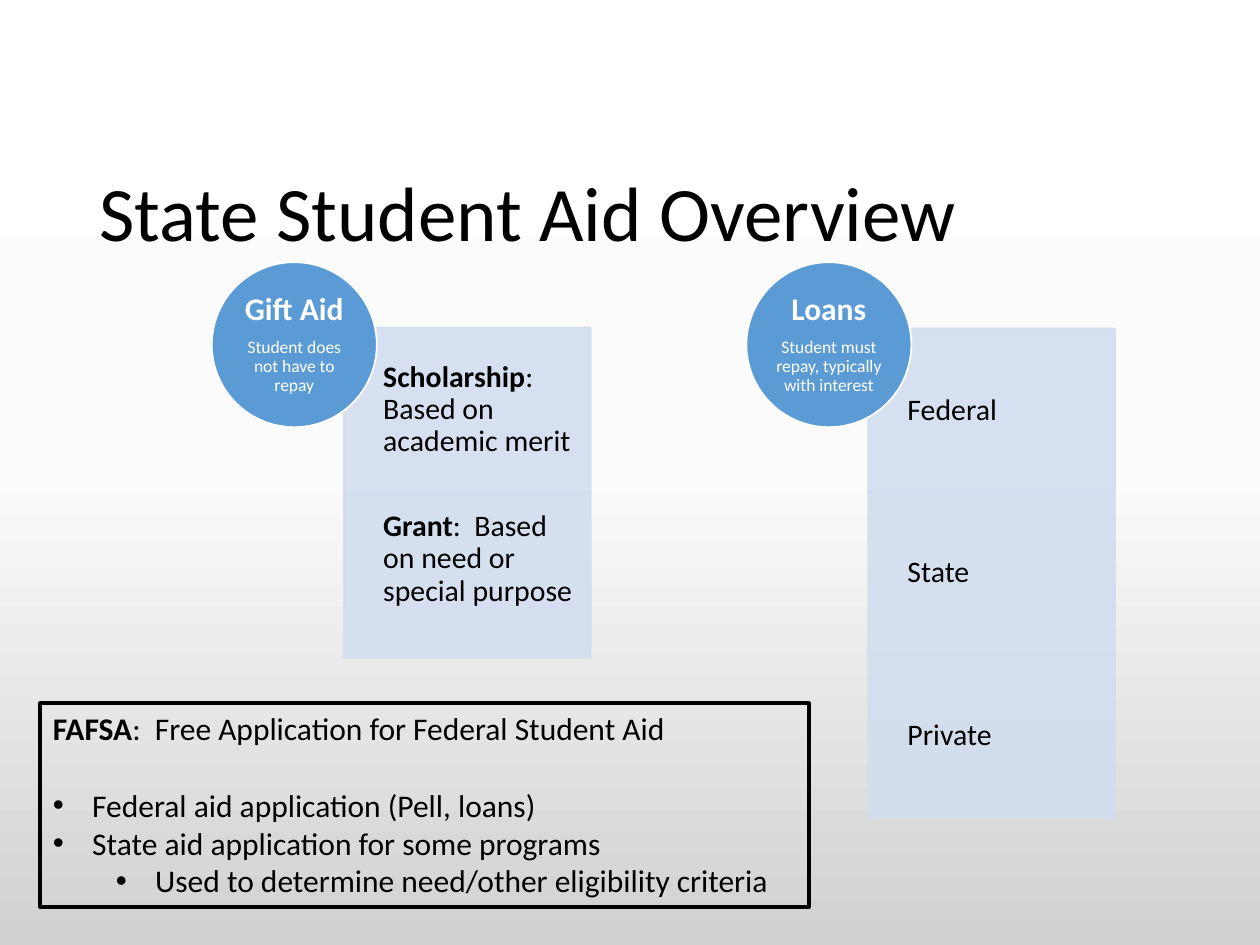
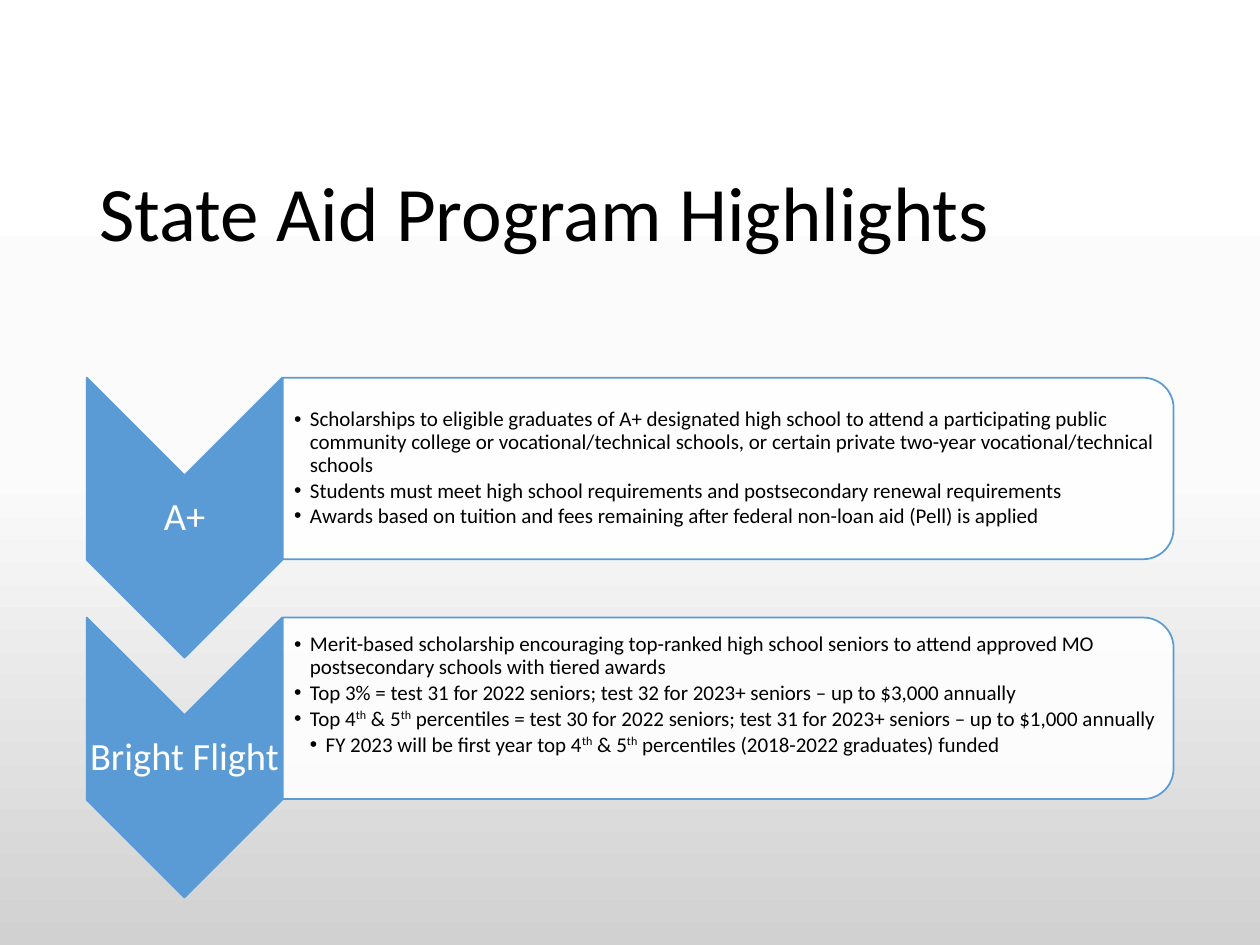
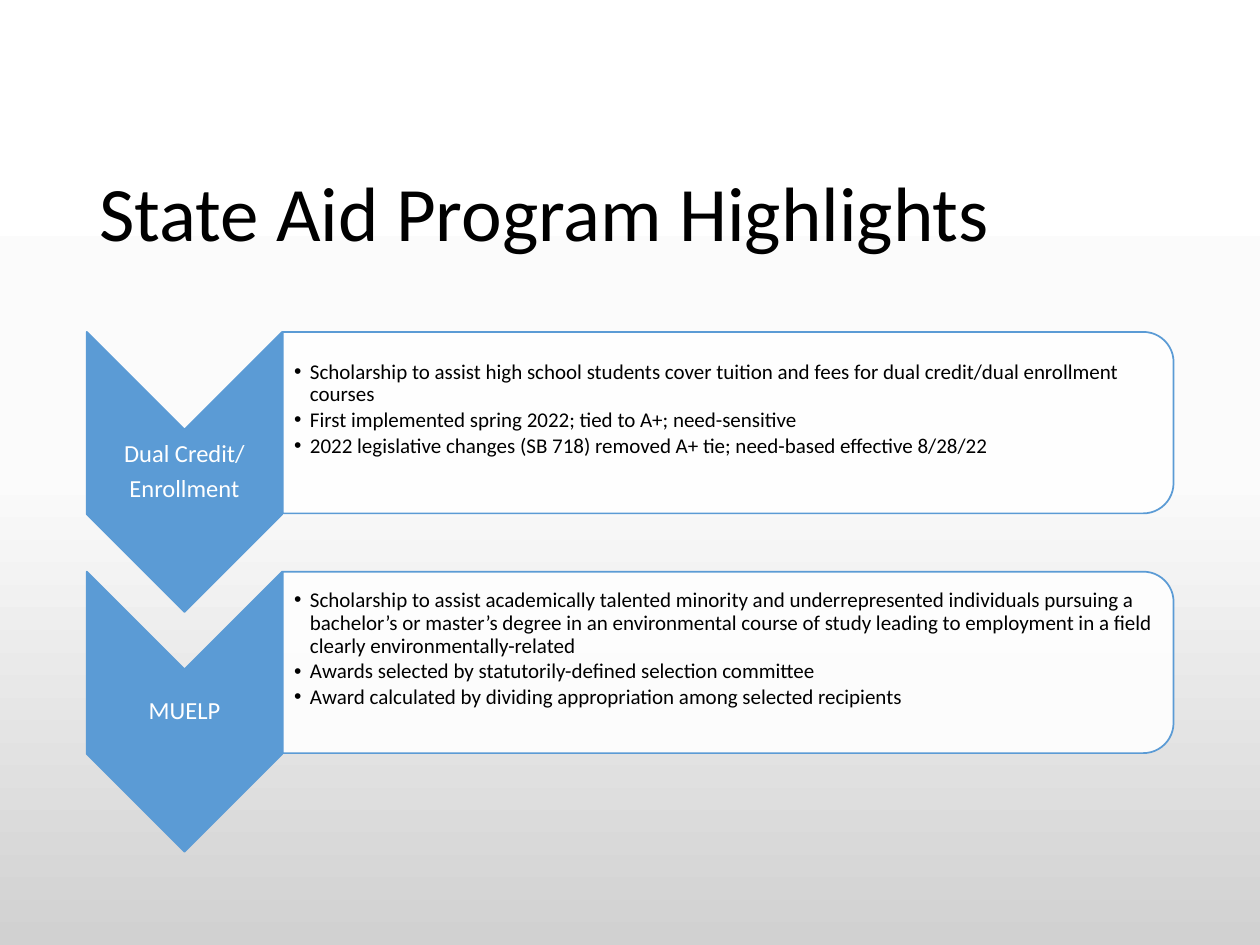
from copy import deepcopy
from dataclasses import dataclass, replace
from typing import Optional

from lxml.etree import SubElement
from pptx import Presentation
from pptx.dml.color import RGBColor
from pptx.enum.shapes import MSO_SHAPE
from pptx.enum.text import MSO_ANCHOR, MSO_AUTO_SIZE, PP_ALIGN
from pptx.oxml.ns import qn
from pptx.util import Pt

FONT = "Calibri"
BLACK = RGBColor(0x00, 0x00, 0x00)
WHITE = RGBColor(0xFF, 0xFF, 0xFF)
BLUE = RGBColor(0x5B, 0x9B, 0xD5)
PALE_BLUE = RGBColor(0xD2, 0xDE, 0xEF)
BACKGROUND_STOPS = (
    (0, WHITE),
    (0.5, RGBColor(0xFB, 0xFB, 0xFB)),
    (1, RGBColor(0xD1, 0xD1, 0xD1)),
)

ONE_BODY, TWO_BODIES = 1, 3  # layouts with one and with two body placeholders

CARD_WIDTH, CARD_HEIGHT, CARD_INDENT = 141, 94.3, 22.4
CIRCLE_TOP = 149.8
ROW_PITCH = 137
CHEVRON_LEFT, CHEVRON_WIDTH, CHEVRON_HEIGHT = 49.6, 111.6, 160
PANEL_LEFT, PANEL_WIDTH, PANEL_HEIGHT = 161.6, 509, 103.7


@dataclass(frozen=True)
class Box:
    left: float
    top: float
    width: float
    height: float

    def turned(self) -> "Box":
        """The frame that covers this box once it is rotated by 90 degrees."""
        shift = (self.width - self.height) / 2
        return Box(self.left + shift, self.top - shift, self.height, self.width)

    def points(self) -> tuple:
        return Pt(self.left), Pt(self.top), Pt(self.width), Pt(self.height)


@dataclass(frozen=True)
class Span:
    text: str
    bold: bool = False
    raised: bool = False


@dataclass(frozen=True)
class Line:
    spans: tuple[Span, ...]
    level: Optional[int] = None  # bullet level; None means no bullet
    size: Optional[float] = None
    space_before: float = 0


@dataclass(frozen=True)
class TextStyle:
    size: float
    color: RGBColor = BLACK
    alignment: PP_ALIGN = PP_ALIGN.LEFT
    line_spacing: float = 0.9
    space_after: float = 0.35  # share of the text size
    indents: tuple[float, ...] = ()
    anchor: MSO_ANCHOR = MSO_ANCHOR.MIDDLE
    insets: tuple[float, float, float, float] = (0, 0, 0, 0)


@dataclass(frozen=True)
class Card:
    line: Line
    bottom_inset: float = 9.4


@dataclass(frozen=True)
class AidType:
    name: str
    note: str
    circle_left: float
    card_left: float
    card_top: float
    card_pitch: float
    cards: tuple[Card, ...]


@dataclass(frozen=True)
class Program:
    name: tuple[str, ...]
    points: tuple[Line, ...]
    bottom_inset: float = 1


TITLE_STYLE = TextStyle(44, space_after=0, insets=(7.2, 3.6, 7.2, 3.6))
CARD_STYLE = TextStyle(17)
CIRCLE_STYLE = TextStyle(18, WHITE, PP_ALIGN.CENTER)
FAFSA_STYLE = TextStyle(18, line_spacing=1, space_after=0, indents=(22.5, 58.5),
                        anchor=MSO_ANCHOR.TOP, insets=(7.2, 3.6, 7.2, 3.6))


def line(text: str, level: Optional[int] = None, **options: float) -> Line:
    return Line((Span(text),), level, **options)


TH = Span("th", raised=True)

AID_TYPES = (
    AidType("Gift Aid", "Student does not have to repay", 121, 196.6, 187.2, 94.3, (
        Card(Line((Span("Scholarship", bold=True),
                   Span(": Based on academic merit")))),
        Card(Line((Span("Grant", bold=True),
                   Span(":  Based on need or special purpose"))), bottom_inset=27.6),
    )),
    AidType("Loans", "Student must repay, typically with interest",
            426.5, 496.2, 187.7, 92.7,
            (Card(line("Federal")), Card(line("State")), Card(line("Private")))),
)

FAFSA_LINES = (
    Line((Span("FAFSA", bold=True),
          Span(":  Free Application for Federal Student Aid"))),
    line("Federal aid application (Pell, loans)", 0, space_before=22),
    line("State aid application for some programs", 0),
    line("Used to determine need/other eligibility criteria", 1),
)

FIRST_PROGRAMS = (
    Program(("A+",), (
        line("Scholarships to eligible graduates of A+ designated high school to attend "
             "a participating public community college or vocational/technical schools, "
             "or certain private two-year vocational/technical schools", 0),
        line("Students must meet high school requirements and postsecondary renewal "
             "requirements", 0),
        line("Awards based on tuition and fees remaining after federal non-loan aid "
             "(Pell) is applied", 0),
    )),
    Program(("Bright Flight",), (
        line("Merit-based scholarship encouraging top-ranked high school seniors to "
             "attend approved MO postsecondary schools with tiered awards", 0),
        line("Top 3% = test 31 for 2022 seniors; test 32 for 2023+ seniors – "
             "up to $3,000 annually", 0),
        Line((Span("Top 4"), TH, Span(" & 5"), TH,
              Span(" percentiles = test 30 for 2022 seniors; test 31 for 2023+ seniors – "
                   "up to $1,000 annually")), 0),
        Line((Span("FY 2023 will be first year top 4"), TH, Span(" & 5"), TH,
              Span(" percentiles (2018-2022 graduates) funded")), 1),
    ), bottom_inset=16),
)

SECOND_PROGRAMS = (
    Program(("Dual Credit/", "Enrollment"), (
        line("Scholarship to assist high school students cover tuition and fees for "
             "dual credit/dual enrollment courses", 0),
        line("First implemented spring 2022; tied to A+; need-sensitive", 0),
        line("2022 legislative changes (SB 718) removed A+ tie; need-based effective "
             "8/28/22", 0),
    ), bottom_inset=16),
    Program(("MUELP",), (
        line("Scholarship to assist academically talented minority and underrepresented "
             "individuals pursuing a bachelor’s or master’s degree in an environmental "
             "course of study leading to employment in a field clearly "
             "environmentally-related", 0),
        line("Awards selected by statutorily-defined selection committee", 0),
        line("Award calculated by dividing appropriation among selected recipients", 0),
    ), bottom_inset=16),
)


def set_bullet(paragraph, level: Optional[int], indents: tuple[float, ...]) -> None:
    properties = paragraph._p.get_or_add_pPr()
    if level is None:
        properties.set("marL", "0")
        properties.set("indent", "0")
        SubElement(properties, qn("a:buNone"))
        return
    paragraph.level = level
    properties.set("marL", str(Pt(indents[level])))
    properties.set("indent", str(-Pt(indents[0])))
    SubElement(properties, qn("a:buFont")).set("typeface", "Arial")
    SubElement(properties, qn("a:buChar")).set("char", "•")


def write(text_frame, lines: tuple[Line, ...], style: TextStyle) -> None:
    text_frame.word_wrap = True
    text_frame.auto_size = MSO_AUTO_SIZE.NONE
    text_frame.vertical_anchor = style.anchor
    (text_frame.margin_left, text_frame.margin_top,
     text_frame.margin_right, text_frame.margin_bottom) = map(Pt, style.insets)
    for index, item in enumerate(lines):
        paragraph = text_frame.add_paragraph() if index else text_frame.paragraphs[0]
        size = item.size or style.size
        set_bullet(paragraph, item.level, style.indents)
        paragraph.alignment = style.alignment
        paragraph.line_spacing = style.line_spacing
        paragraph.space_before = Pt(item.space_before)
        paragraph.space_after = Pt(size * style.space_after)
        for span in item.spans:
            run = paragraph.add_run()
            run.text = span.text
            run.font.name = FONT
            run.font.size = Pt(size)
            run.font.bold = span.bold
            run.font.color.rgb = style.color
            if span.raised:
                run._r.get_or_add_rPr().set("baseline", "30000")


def place(shape, box: Box) -> None:
    shape.left, shape.top, shape.width, shape.height = box.points()


def add_filled_shape(slide, kind: MSO_SHAPE, box: Box, fill: RGBColor, outline: RGBColor,
                     translucent: bool = False, rotation: float = 0):
    shape = slide.shapes.add_shape(kind, *box.points())
    shape.rotation = rotation
    shape.shadow.inherit = False
    shape.fill.solid()
    shape.fill.fore_color.rgb = fill
    shape.line.color.rgb = outline
    shape.line.width = Pt(1)
    if translucent:
        for color in shape.element.spPr.iter(qn("a:srgbClr")):
            if color.get("val") == str(fill):
                SubElement(color, qn("a:alpha")).set("val", "90000")
    return shape


def set_background(presentation) -> None:
    master = presentation.slide_master
    fill = master.background.fill
    fill.gradient()
    fill.gradient_angle = 270
    stop_list = next(master.element.iter(qn("a:gsLst")))
    while len(stop_list) < len(BACKGROUND_STOPS):
        stop_list.append(deepcopy(stop_list[-1]))
    for stop, (position, color) in zip(fill.gradient_stops, BACKGROUND_STOPS):
        stop.position = position
        stop.color.rgb = color


def add_titled_slide(presentation, layout: int, title: str):
    slide = presentation.slides.add_slide(presentation.slide_layouts[layout])
    place(slide.shapes.title, Box(49.5, 71.3, 621, 104.4))
    write(slide.shapes.title.text_frame, (line(title),), TITLE_STYLE)
    return slide


def draw_aid_type(slide, aid: AidType) -> None:
    for index, card in enumerate(aid.cards):
        box = Box(aid.card_left, aid.card_top + index * aid.card_pitch,
                  CARD_WIDTH, CARD_HEIGHT)
        shape = add_filled_shape(slide, MSO_SHAPE.RECTANGLE, box, PALE_BLUE, PALE_BLUE,
                                 translucent=True)
        insets = (CARD_INDENT, 9.4, 9.4, card.bottom_inset)
        write(shape.text_frame, (card.line,), replace(CARD_STYLE, insets=insets))
    circle = add_filled_shape(slide, MSO_SHAPE.OVAL,
                              Box(aid.circle_left, CIRCLE_TOP, CARD_HEIGHT, CARD_HEIGHT),
                              BLUE, WHITE)
    heading = Line((Span(aid.name, bold=True),))
    write(circle.text_frame, (heading, line(aid.note, size=10)), CIRCLE_STYLE)


def draw_program(slide, program: Program, body, top: float, name_size: float) -> None:
    chevron = Box(CHEVRON_LEFT, top, CHEVRON_WIDTH, CHEVRON_HEIGHT)
    add_filled_shape(slide, MSO_SHAPE.CHEVRON, chevron.turned(), BLUE, BLUE, rotation=90)
    label = slide.shapes.add_textbox(
        *Box(CHEVRON_LEFT, top + 56, CHEVRON_WIDTH, 48).points())
    write(label.text_frame, tuple(map(line, program.name)),
          TextStyle(name_size, WHITE, PP_ALIGN.CENTER, insets=(1, 1, 1, 1)))

    panel = Box(PANEL_LEFT, top, PANEL_WIDTH, PANEL_HEIGHT)
    add_filled_shape(slide, MSO_SHAPE.ROUND_2_SAME_RECTANGLE, panel.turned(), WHITE, BLUE,
                     translucent=True, rotation=90)
    place(body, Box(PANEL_LEFT, top + 5, PANEL_WIDTH - 5, PANEL_HEIGHT - 10))
    write(body.text_frame, program.points,
          TextStyle(12, space_after=0.15, indents=(9, 18),
                    insets=(6.5, 1, 1, program.bottom_inset)))
    slide.shapes.element.append(body.element)  # brings the list in front of its panel


def add_overview(presentation) -> None:
    slide = add_titled_slide(presentation, ONE_BODY, "State Student Aid Overview")
    for aid in AID_TYPES:
        draw_aid_type(slide, aid)
    fafsa = slide.placeholders[1]
    place(fafsa, Box(23, 401.8, 439.2, 116.6))
    fafsa.line.color.rgb = BLACK
    fafsa.line.width = Pt(2)
    write(fafsa.text_frame, FAFSA_LINES, FAFSA_STYLE)
    slide.shapes.element.append(fafsa.element)


def add_highlights(presentation, programs: tuple[Program, ...], top: float,
                   name_size: float) -> None:
    slide = add_titled_slide(presentation, TWO_BODIES, "State Aid Program Highlights")
    bodies = (slide.placeholders[1], slide.placeholders[2])
    for index, (program, body) in enumerate(zip(programs, bodies)):
        draw_program(slide, program, body, top + index * ROW_PITCH, name_size)


def main() -> None:
    presentation = Presentation()
    presentation.slide_width, presentation.slide_height = Pt(720), Pt(540)
    set_background(presentation)
    add_overview(presentation)
    add_highlights(presentation, FIRST_PROGRAMS, top=215.9, name_size=22)
    add_highlights(presentation, SECOND_PROGRAMS, top=189.7, name_size=14)
    presentation.save("out.pptx")


if __name__ == "__main__":
    main()
